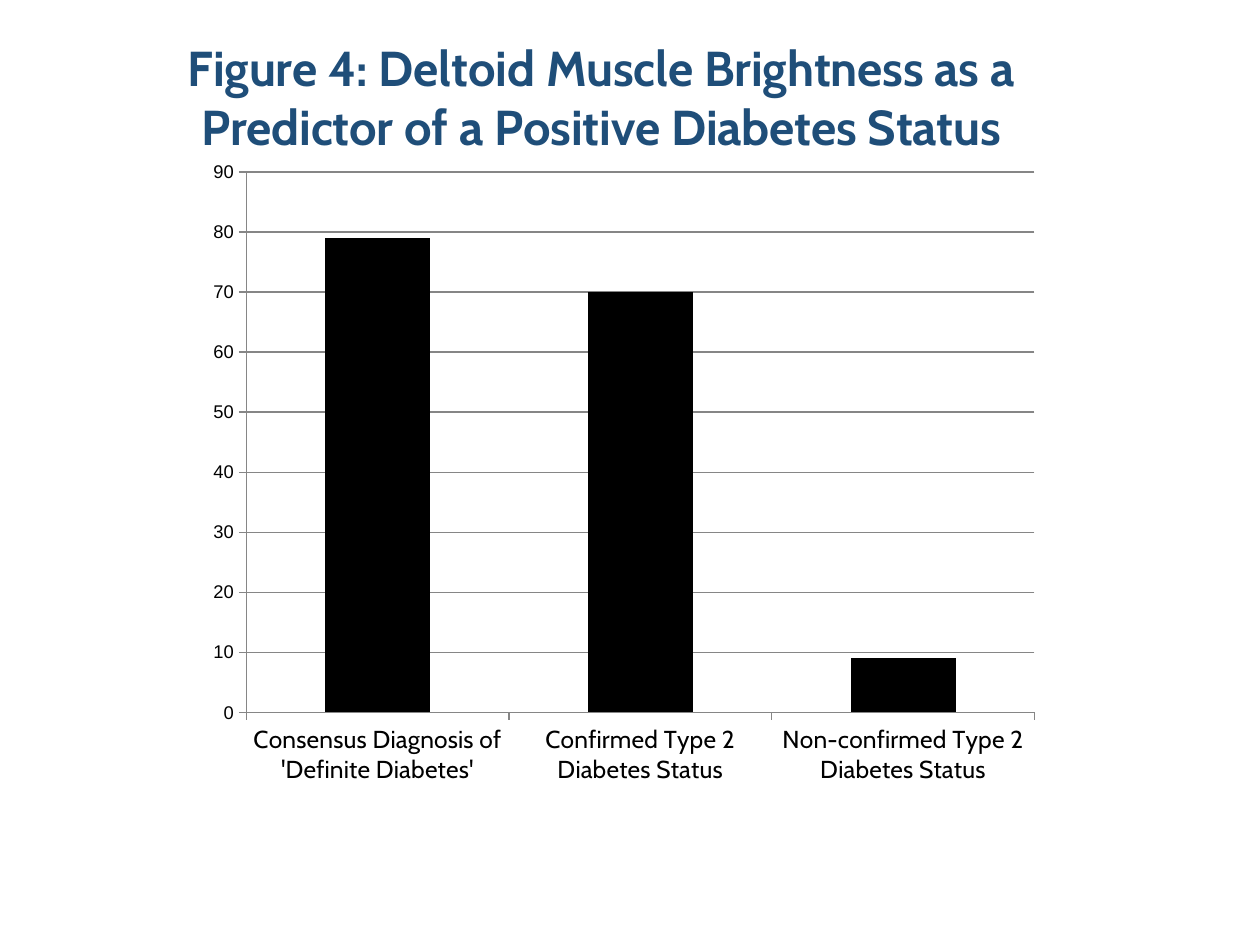
from lxml import etree
from pptx import Presentation
from pptx.chart.data import CategoryChartData
from pptx.dml.color import RGBColor
from pptx.enum.chart import XL_CHART_TYPE, XL_TICK_MARK
from pptx.oxml import parse_xml
from pptx.util import Inches, Pt

COLUMN = XL_CHART_TYPE.COLUMN_CLUSTERED
OUT = XL_TICK_MARK.OUTSIDE
NONE = XL_TICK_MARK.NONE
BLACK = RGBColor(0x00, 0x00, 0x00)
NAVY = RGBColor(0x1F, 0x4E, 0x79)
GRAY = RGBColor(0x86, 0x86, 0x86)
NS = "http://schemas.openxmlformats.org/drawingml/2006/chart"


def write(frame, text, **fmt):
    """Put text in a frame and format its run."""
    run = frame.paragraphs[0].add_run()
    run.text = text
    run.font.name = fmt["name"]
    run.font.size = Pt(fmt["size"])
    run.font.bold = fmt["bold"]
    run.font.color.rgb = fmt["color"]


def place(part, index, **marks):
    """Give a chart part a manual layout as fractions of the chart."""
    for old in part.findall(f"{{{NS}}}layout"):
        part.remove(old)
    layout = parse_xml(f'<c:layout xmlns:c="{NS}"><c:manualLayout/></c:layout>')
    for tag, val in marks.items():
        etree.SubElement(layout[0], f"{{{NS}}}{tag}").set("val", str(val))
    part.insert(index, layout)


prs = Presentation()
prs.slide_width, prs.slide_height = Inches(10), Inches(7.5)
slide = prs.slides.add_slide(prs.slide_layouts[6])

# Chart data
data = CategoryChartData()
data.categories = [
    "Consensus Diagnosis of 'Definite Diabetes'",
    "Confirmed Type 2 Diabetes Status",
    "Non-confirmed Type 2 Diabetes Status",
]
data.add_series("Series 1", (79, 70, 9))
chart = slide.shapes.add_chart(
    COLUMN, Inches(0.42), Inches(0), Inches(9.08), Inches(6.5), data).chart
chart.has_legend = False
chart.font.name = "Arial"
chart.font.size = Pt(10)
chart.font.color.rgb = BLACK

# Title
chart.has_title = True
title = chart.chart_title
title.include_in_layout = False
write(title.text_frame, "Figure 4: Deltoid Muscle Brightness as a "
      "Predictor of a Positive Diabetes Status",
      name="Cabin", size=28, bold=True, color=NAVY)
place(title._element, 1, xMode="edge", yMode="edge", x=0.11, y=0.03)

# Columns
plot = chart.plots[0]
plot.gap_width = 150
plot.vary_by_categories = False
fill = plot.series[0].format.fill
fill.solid()
fill.fore_color.rgb = BLACK

# Axes
cat, val = chart.category_axis, chart.value_axis
for axis, name, size in ((cat, "Cabin", 14), (val, "Arial", 10.5)):
    axis.major_tick_mark = OUT
    axis.minor_tick_mark = NONE
    axis.format.line.color.rgb = GRAY
    axis.format.line.width = Pt(0.75)
    font = axis.tick_labels.font
    font.name, font.size = name, Pt(size)
    font.color.rgb = BLACK
val.minimum_scale, val.maximum_scale, val.major_unit = 0, 90, 10
val.has_major_gridlines = True
grid = val.major_gridlines.format.line
grid.color.rgb = GRAY
grid.width = Pt(0.75)

# Plot area
place(chart._chartSpace.chart.plotArea, 0, layoutTarget="inner",
      xMode="edge", yMode="edge", x=0.169, y=0.21, w=0.689, h=0.66)

prs.save("out.pptx")
